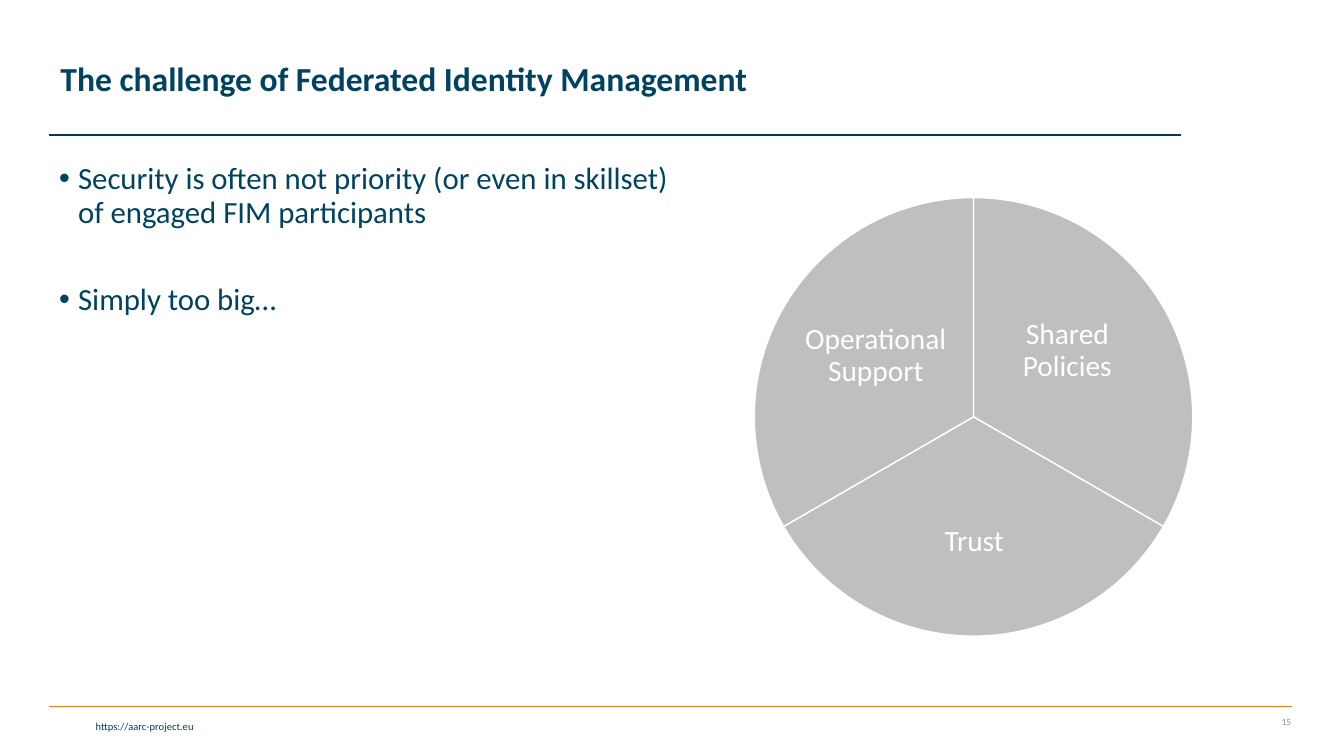
from lxml import etree
from pptx import Presentation
from pptx.dml.color import RGBColor
from pptx.enum.shapes import MSO_CONNECTOR, MSO_SHAPE
from pptx.enum.text import MSO_ANCHOR, MSO_AUTO_SIZE, PP_ALIGN
from pptx.oxml.ns import qn
from pptx.util import Cm, Pt

LINE, PIE = MSO_CONNECTOR.STRAIGHT, MSO_SHAPE.PIE
TOP, MIDDLE = MSO_ANCHOR.TOP, MSO_ANCHOR.MIDDLE
LEFT, CENTER, RIGHT = PP_ALIGN.LEFT, PP_ALIGN.CENTER, PP_ALIGN.RIGHT
NO_FIT = MSO_AUTO_SIZE.NONE

COLORS = {"title": "004361", "body": "004360", "url": "003F5E", "page": "8C8C8C",
          "rule": "003959", "foot": "F57B20", "slice": "BFBFBF", "white": "FFFFFF"}
FONT = "Calibri"

TITLE = "The challenge of Federated Identity Management"
# Text and the space before it in points
BULLETS = [
    ("Security is often not priority (or even in skillset) of engaged FIM participants", 0),
    ("Simply too big…", 39),
]
URL, PAGE = "https://aarc-project.eu", "15"
# Label and its box in cm, clockwise from the top
SLICES = [
    ("Shared Policies", (25.02, 7.01, 3.76, 3.68)),
    ("Trust", (22.05, 11.94, 5, 3.43)),
    ("Operational Support", (20.19, 7.14, 3.76, 3.68)),
]
DISC = (19.01, 4.98, 11.05, 11.05)
# Colour, left, right and height of each rule in cm
RULES = [("foot", 1.24, 32.56, 17.81), ("rule", 1.24, 29.77, 3.4)]


def color(name):
    return RGBColor.from_string(COLORS[name])


def style(para, size, name, align=LEFT, bold=False):
    para.alignment = align
    for run in para.runs:
        font = run.font
        font.name, font.size, font.bold = FONT, Pt(size), bold
        font.color.rgb = color(name)


def add_box(slide, box, text, size, name, align, anchor=TOP, inset=None):
    frame = slide.shapes.add_textbox(*map(Cm, box)).text_frame
    frame.word_wrap = True
    frame.vertical_anchor = anchor
    if inset is not None:
        frame.margin_left = frame.margin_right = Cm(inset)
        frame.margin_top = frame.margin_bottom = Cm(inset)
    frame.text = text
    style(frame.paragraphs[0], size, name, align)
    return frame


def add_title(slide):
    title = slide.shapes.title
    title.left, title.top, title.width, title.height = map(Cm, (1.27, 0.2, 26.7, 3.68))
    frame = title.text_frame
    frame.auto_size = NO_FIT
    frame.vertical_anchor = MIDDLE
    frame.text = TITLE
    para = frame.paragraphs[0]
    para.line_spacing = 0.9
    style(para, 24, "title", bold=True)


def add_rules(slide):
    for name, left, right, y in RULES:
        rule = slide.shapes.add_connector(LINE, Cm(left), Cm(y), Cm(right), Cm(y))
        rule.line.color.rgb = color(name)
        rule.line.width = Pt(1)
        etree.SubElement(rule._element.spPr, qn("a:effectLst"))


def add_bullets(slide):
    frame = slide.shapes.add_textbox(*map(Cm, (1.24, 3.99, 16.64, 13.16))).text_frame
    frame.word_wrap = True
    frame.text = "\n".join(text for text, gap in BULLETS)
    for para, (text, gap) in zip(frame.paragraphs, BULLETS):
        props = para._p.get_or_add_pPr()
        props.set("marL", str(Cm(0.48)))
        props.set("indent", str(Cm(-0.48)))
        etree.SubElement(props, qn("a:buFont")).set("typeface", "Arial")
        etree.SubElement(props, qn("a:buChar")).set("char", "•")
        para.line_spacing = 0.9
        para.space_before = Pt(gap)
        style(para, 22, "body")


def add_pie(slide):
    sweep = 360 / len(SLICES)
    for i, (label, box) in enumerate(SLICES):
        start = 270 + i * sweep
        part = slide.shapes.add_shape(PIE, *map(Cm, DISC))
        # One degree is 60000 units, and an adjustment counts 100000 units
        part.adjustments[0] = start % 360 * 0.6
        part.adjustments[1] = (start + sweep) % 360 * 0.6
        part.shadow.inherit = False
        part.fill.solid()
        part.fill.fore_color.rgb = color("slice")
        part.line.color.rgb = color("white")
        part.line.width = Pt(1)
        frame = add_box(slide, box, label, 21, "white", CENTER, MIDDLE, 0.07)
        frame.paragraphs[0].line_spacing = 0.9


def main():
    deck = Presentation()
    deck.slide_width, deck.slide_height = Cm(33.87), Cm(19.05)
    slide = deck.slides.add_slide(deck.slide_layouts[5])
    add_title(slide)
    add_rules(slide)
    add_bullets(slide)
    add_pie(slide)
    add_box(slide, (0.08, 18.01, 5.05, 0.58), URL, 7.5, "url", RIGHT)
    add_box(slide, (30.73, 17.81, 2.06, 0.76), PAGE, 6.8, "page", RIGHT, MIDDLE)
    deck.save("out.pptx")


if __name__ == "__main__":
    main()
